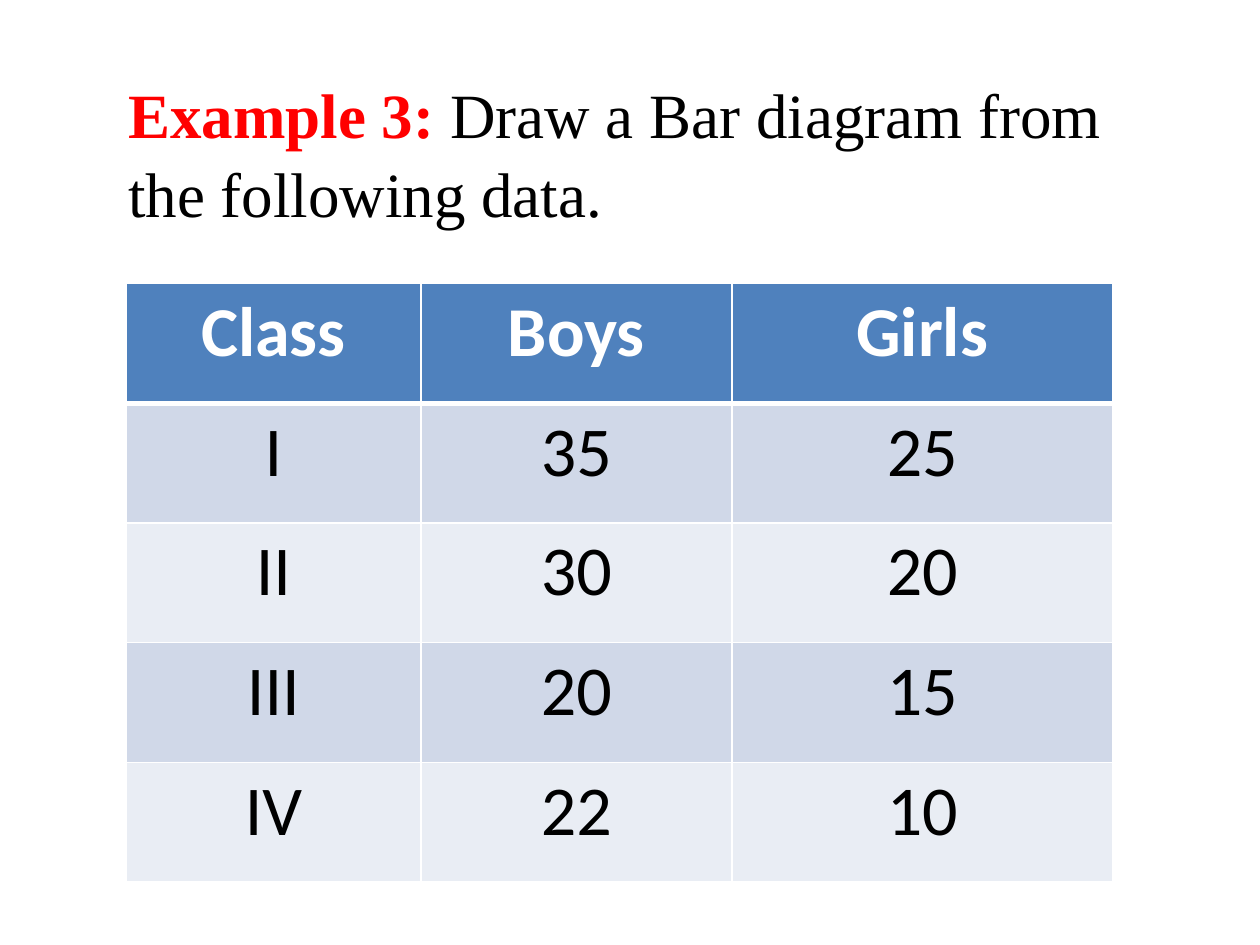
from lxml import etree
from pptx import Presentation
from pptx import util as u
from pptx.dml.color import RGBColor
from pptx.enum import text
from pptx.oxml import ns

COLORS = {
    "header": "4F81BD",
    "odd": "D0D8E8",
    "even": "E9EDF4",
    "border": "FFFFFF",
    "header_text": "FFFFFF",
    "body": "000000",
    "label": "FF0000",
}
QUESTION = [
    ("Example 3: ", "label", True),
    ("Draw a Bar diagram from the following data.", "body", False),
]
PUPILS = [
    ("Class", "Boys", "Girls"),
    ("I", "35", "25"),
    ("II", "30", "20"),
    ("III", "20", "15"),
    ("IV", "22", "10"),
]
COLUMN_WIDTHS = (2.34, 2.47, 3.02)


def rgb(name):
    return RGBColor.from_string(COLORS[name])


def format_run(run, color, **font_values):
    for attribute, value in font_values.items():
        setattr(run.font, attribute, value)
    run.font.color.rgb = rgb(color)


def add_borders(cell, widths):
    """Draw the cell's edges; widths maps a:ln tags to points."""
    properties = cell._tc.get_or_add_tcPr()
    for tag, points in widths.items():
        line = etree.SubElement(properties, ns.qn(tag), w=str(u.Pt(points)))
        fill = etree.SubElement(line, ns.qn("a:solidFill"))
        etree.SubElement(fill, ns.qn("a:srgbClr"), val=COLORS["border"])


def add_question(slide, left, top, width, height):
    box = slide.shapes.add_textbox(left, top, width, height)
    box.text_frame.word_wrap = True
    paragraph = box.text_frame.paragraphs[0]
    paragraph.line_spacing = 1.05
    for wording, color, bold in QUESTION:
        run = paragraph.add_run()
        run.text = wording
        format_run(run, color, name="Times New Roman", size=u.Pt(36), bold=bold)


def add_pupil_table(slide, left, top, width, height):
    table = slide.shapes.add_table(
        len(PUPILS), len(COLUMN_WIDTHS), left, top, width, height
    ).table
    for column, share in zip(table.columns, COLUMN_WIDTHS):
        column.width = int(width * share / sum(COLUMN_WIDTHS))
    for r, values in enumerate(PUPILS):
        is_header = r == 0
        band = "header" if is_header else "odd" if r % 2 else "even"
        edges = {
            "a:lnL": 1,
            "a:lnR": 1,
            "a:lnT": 3 if r == 1 else 1,
            "a:lnB": 3 if is_header else 1,
        }
        for c, value in enumerate(values):
            cell = table.cell(r, c)
            add_borders(cell, edges)
            cell.fill.solid()
            cell.fill.fore_color.rgb = rgb(band)
            paragraph = cell.text_frame.paragraphs[0]
            paragraph.alignment = text.PP_ALIGN.CENTER
            run = paragraph.add_run()
            run.text = value
            format_run(run, "header_text" if is_header else "body",
                       name="Calibri", size=u.Pt(40), bold=is_header)


def main():
    deck = Presentation()
    deck.slide_width, deck.slide_height = u.Inches(10), u.Inches(7.5)
    slide = deck.slides.add_slide(deck.slide_layouts[6])
    add_pupil_table(slide, u.Inches(1), u.Inches(2.25), u.Inches(7.83), u.Inches(4.75))
    add_question(slide, u.Inches(0.92), u.Inches(0.52), u.Inches(8.17), u.Inches(1.31))
    deck.save("out.pptx")


if __name__ == "__main__":
    main()
